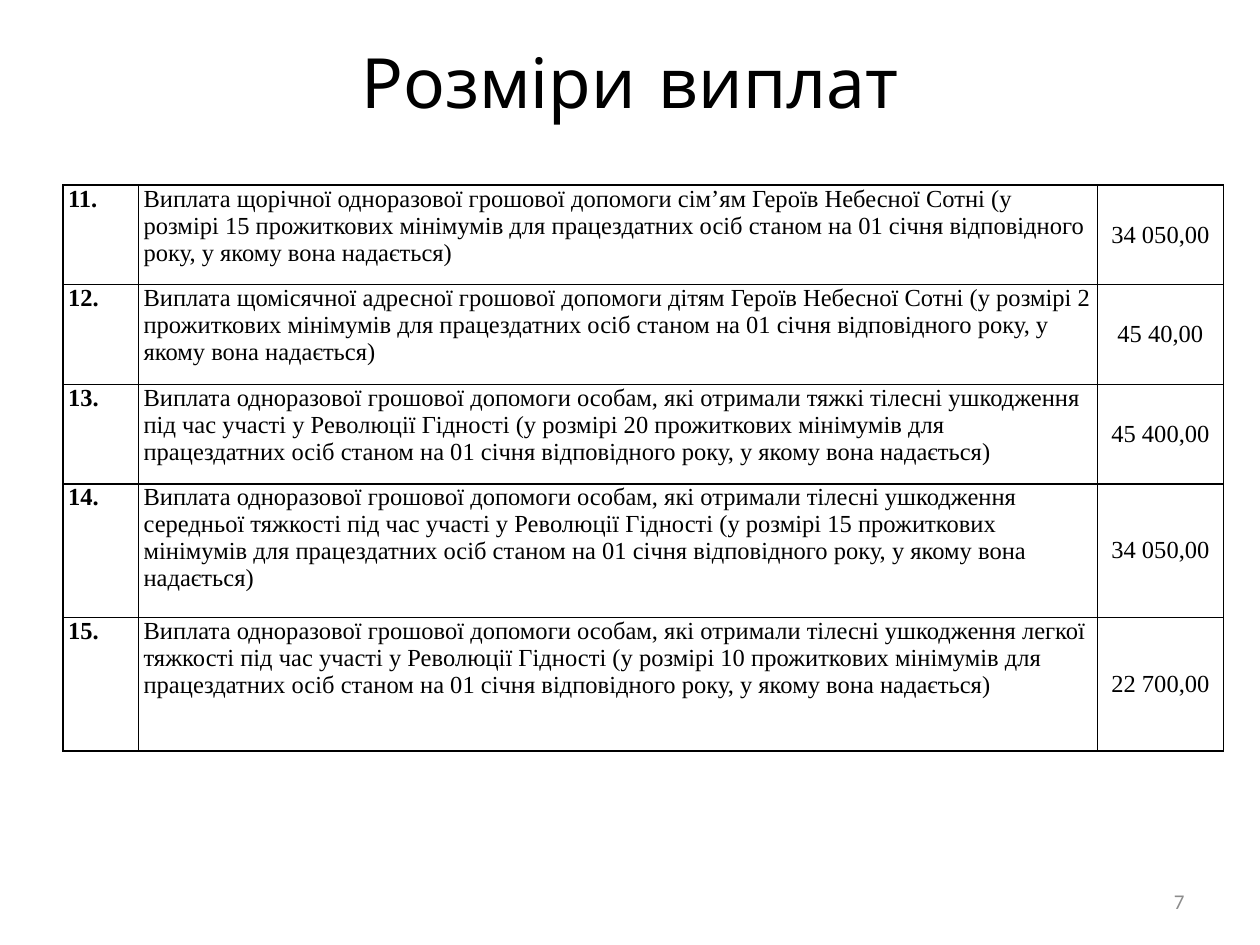
import pptx
import pptx.dml.color
import pptx.enum.text
import pptx.oxml
import pptx.oxml.ns
import pptx.util
from pptx.util import Inches

ALIGN = pptx.enum.text.PP_ALIGN
ANCHOR = pptx.enum.text.MSO_ANCHOR
BLACK = "000000"
COLUMN_WIDTHS = (0.6, 7.61, 1)
ROW_HEIGHTS = (0.79, 0.79, 0.79, 1.06, 1.06)
FIRST_NUMBER = 11
MINIMUMS = "прожиткових мінімумів для працездатних осіб станом на 01 січня відповідного року, у якому вона надається)"
INJURED = "Виплата одноразової грошової допомоги особам, які отримали"
REVOLUTION = "під час участі у Революції Гідності (у розмірі"
PAYMENTS = (
    (f"Виплата щорічної одноразової грошової допомоги сім’ям Героїв Небесної Сотні (у розмірі 15 {MINIMUMS}",
     "34 050,00"),
    (f"Виплата щомісячної адресної грошової допомоги дітям Героїв Небесної Сотні (у розмірі 2 {MINIMUMS}",
     "45 40,00"),
    (f"{INJURED} тяжкі тілесні ушкодження {REVOLUTION} 20 {MINIMUMS}", "45 400,00"),
    (f"{INJURED} тілесні ушкодження середньої тяжкості {REVOLUTION} 15 {MINIMUMS}", "34 050,00"),
    (f"{INJURED} тілесні ушкодження легкої тяжкості {REVOLUTION} 10 {MINIMUMS}", "22 700,00"),
)


def color(hex_value):
    return pptx.dml.color.RGBColor.from_string(hex_value)


def write_text(text_frame, text, font_name, size, align, hex_value=BLACK, bold=False):
    text_frame.text = text
    text_frame.word_wrap = True
    paragraph = text_frame.paragraphs[0]
    paragraph.alignment = align
    font = paragraph.runs[0].font
    font.name = font_name
    font.size = pptx.util.Pt(size)
    font.bold = bold
    font.color.rgb = color(hex_value)


def place(shape, left, top, width, height):
    shape.left, shape.top = Inches(left), Inches(top)
    shape.width, shape.height = Inches(width), Inches(height)


def add_borders(cell):
    """Put a thin black line on all four sides; lines must precede the cell fill."""
    properties = cell._tc.get_or_add_tcPr()
    for index, side in enumerate(("lnL", "lnR", "lnT", "lnB")):
        line = pptx.oxml.parse_xml(
            f'<a:{side} {pptx.oxml.ns.nsdecls("a")} w="12700"><a:solidFill>'
            f'<a:srgbClr val="{BLACK}"/></a:solidFill></a:{side}>')
        properties.insert(index, line)


def fill_cell(cell, text, align=ALIGN.LEFT, anchor=ANCHOR.TOP, bold=False):
    cell.margin_left = cell.margin_right = Inches(0.04)
    cell.margin_top = cell.margin_bottom = 0
    cell.vertical_anchor = anchor
    cell.fill.background()
    add_borders(cell)
    write_text(cell.text_frame, text, "Times New Roman", 14, align, bold=bold)


def add_title(slide):
    title = slide.shapes.title
    place(title, 0.5, 0.3, 9, 0.69)
    write_text(title.text_frame, "Розміри виплат", "Comic Neue", 39.6, ALIGN.CENTER)
    title.text_frame.auto_size = pptx.enum.text.MSO_AUTO_SIZE.NONE
    title.text_frame.vertical_anchor = ANCHOR.MIDDLE


def add_payment_table(slide):
    table = slide.shapes.add_table(
        len(PAYMENTS), len(COLUMN_WIDTHS), Inches(0.5), Inches(1.47),
        Inches(sum(COLUMN_WIDTHS)), Inches(sum(ROW_HEIGHTS))).table
    table.first_row = table.horz_banding = False
    for column, width in zip(table.columns, COLUMN_WIDTHS):
        column.width = Inches(width)
    for index, (description, amount) in enumerate(PAYMENTS):
        row = table.rows[index]
        row.height = Inches(ROW_HEIGHTS[index])
        number_cell, description_cell, amount_cell = row.cells
        fill_cell(number_cell, f"{FIRST_NUMBER + index}.", bold=True)
        fill_cell(description_cell, description)
        fill_cell(amount_cell, amount, ALIGN.CENTER, ANCHOR.MIDDLE)


def add_page_number(slide):
    box = slide.shapes.add_textbox(Inches(7.17), Inches(6.95), Inches(2.33), Inches(0.4))
    write_text(box.text_frame, "7", "Calibri", 12, ALIGN.RIGHT, "8C8C8C")
    box.text_frame.vertical_anchor = ANCHOR.MIDDLE


def main():
    presentation = pptx.Presentation()
    presentation.slide_width, presentation.slide_height = Inches(10), Inches(7.5)
    slide = presentation.slides.add_slide(presentation.slide_layouts.get_by_name("Title Only"))
    add_title(slide)
    add_payment_table(slide)
    add_page_number(slide)
    presentation.save("out.pptx")


if __name__ == "__main__":
    main()
